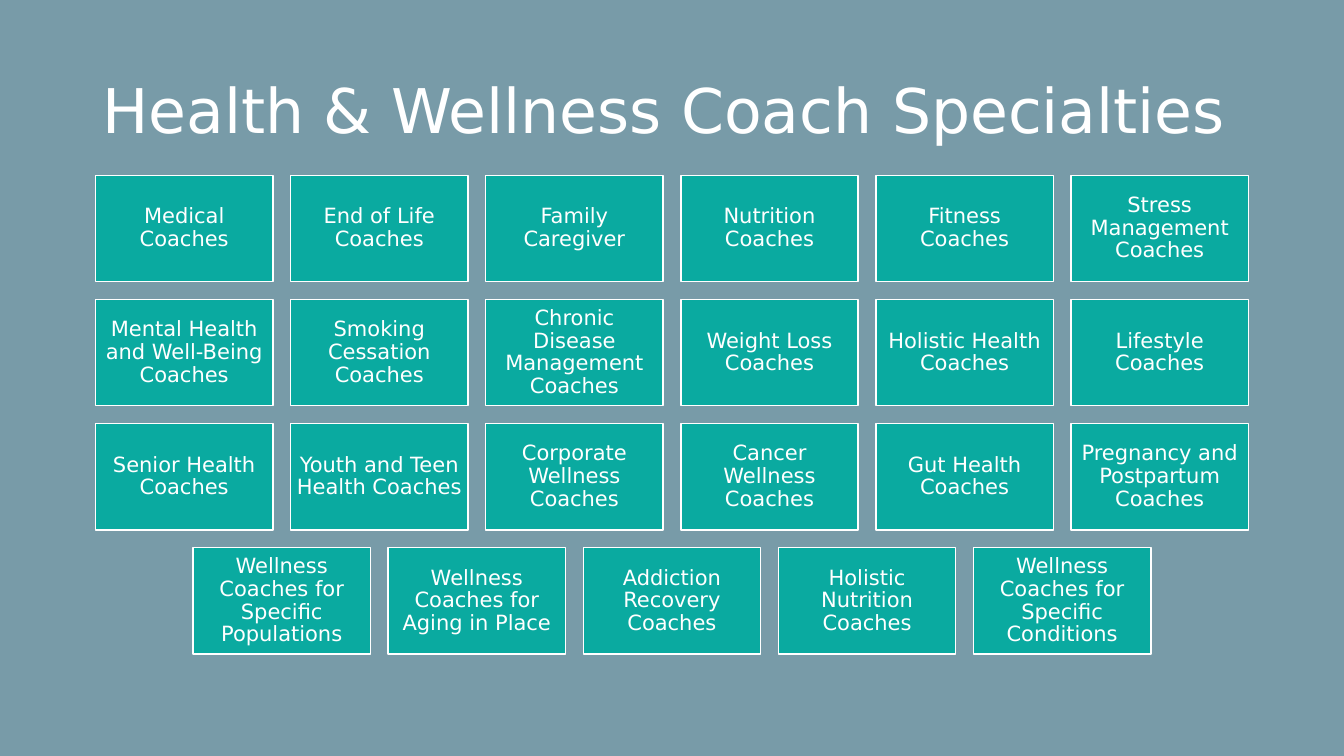
from pptx import Presentation
from pptx.dml.color import RGBColor
from pptx.enum import shapes, text
from pptx.util import Pt

COLORS = {"background": "789BA8", "card": "0AAAA0", "white": "FFFFFF"}
FONT = "DejaVu Sans"
SLIDE_WIDTH, SLIDE_HEIGHT = 960, 540
CARD_WIDTH, CARD_HEIGHT = 126.7, 76
COLUMN_PITCH, ROW_PITCH = 139.36, 88.68
FIRST_ROW_TOP = 125.2

SPECIALTIES = [
    ["Medical Coaches", "End of Life Coaches", "Family Caregiver",
     "Nutrition Coaches", "Fitness Coaches", "Stress Management Coaches"],
    ["Mental Health and Well-Being Coaches", "Smoking Cessation Coaches",
     "Chronic Disease Management Coaches", "Weight Loss Coaches",
     "Holistic Health Coaches", "Lifestyle Coaches"],
    ["Senior Health Coaches", "Youth and Teen Health Coaches",
     "Corporate Wellness Coaches", "Cancer Wellness Coaches",
     "Gut Health Coaches", "Pregnancy and Postpartum Coaches"],
    ["Wellness Coaches for Specific Populations",
     "Wellness Coaches for Aging in Place", "Addiction Recovery Coaches",
     "Holistic Nutrition Coaches", "Wellness Coaches for Specific Conditions"],
]


def color(name):
    return RGBColor.from_string(COLORS[name])


def write_text(shape, content, *, size, align, margins):
    """Fill a shape with one vertically centred paragraph; margins are (horizontal, vertical)."""
    frame = shape.text_frame
    frame.word_wrap = True
    frame.vertical_anchor = text.MSO_ANCHOR.MIDDLE
    frame.margin_left = frame.margin_right = Pt(margins[0])
    frame.margin_top = frame.margin_bottom = Pt(margins[1])
    paragraph = frame.paragraphs[0]
    paragraph.alignment = align
    paragraph.line_spacing = 0.9
    run = paragraph.add_run()
    run.text = content
    run.font.name = FONT
    run.font.size = Pt(size)
    run.font.color.rgb = color("white")


def add_title(slide, content):
    box = slide.shapes.add_textbox(Pt(66), Pt(28.75), Pt(828), Pt(104.4))
    write_text(box, content, size=44, align=text.PP_ALIGN.LEFT, margins=(7.2, 3.6))


def add_card(slide, content, left, top):
    card = slide.shapes.add_shape(shapes.MSO_SHAPE.RECTANGLE, Pt(left), Pt(top),
                                  Pt(CARD_WIDTH), Pt(CARD_HEIGHT))
    card.shadow.inherit = False
    card.fill.solid()
    card.fill.fore_color.rgb = color("card")
    card.line.color.rgb = color("white")
    card.line.width = Pt(1)
    write_text(card, content, size=15, align=text.PP_ALIGN.CENTER, margins=(4.5, 4.5))


def add_card_row(slide, labels, top):
    """Place a row of cards centred across the slide."""
    row_width = (len(labels) - 1) * COLUMN_PITCH + CARD_WIDTH
    left = (SLIDE_WIDTH - row_width) / 2
    for column, label in enumerate(labels):
        add_card(slide, label, left + column * COLUMN_PITCH, top)


def main():
    presentation = Presentation()
    presentation.slide_width = Pt(SLIDE_WIDTH)
    presentation.slide_height = Pt(SLIDE_HEIGHT)
    slide = presentation.slides.add_slide(presentation.slide_layouts[6])
    slide.background.fill.solid()
    slide.background.fill.fore_color.rgb = color("background")

    add_title(slide, "Health & Wellness Coach Specialties")
    for row, labels in enumerate(SPECIALTIES):
        add_card_row(slide, labels, FIRST_ROW_TOP + row * ROW_PITCH)
    presentation.save("out.pptx")


if __name__ == "__main__":
    main()
